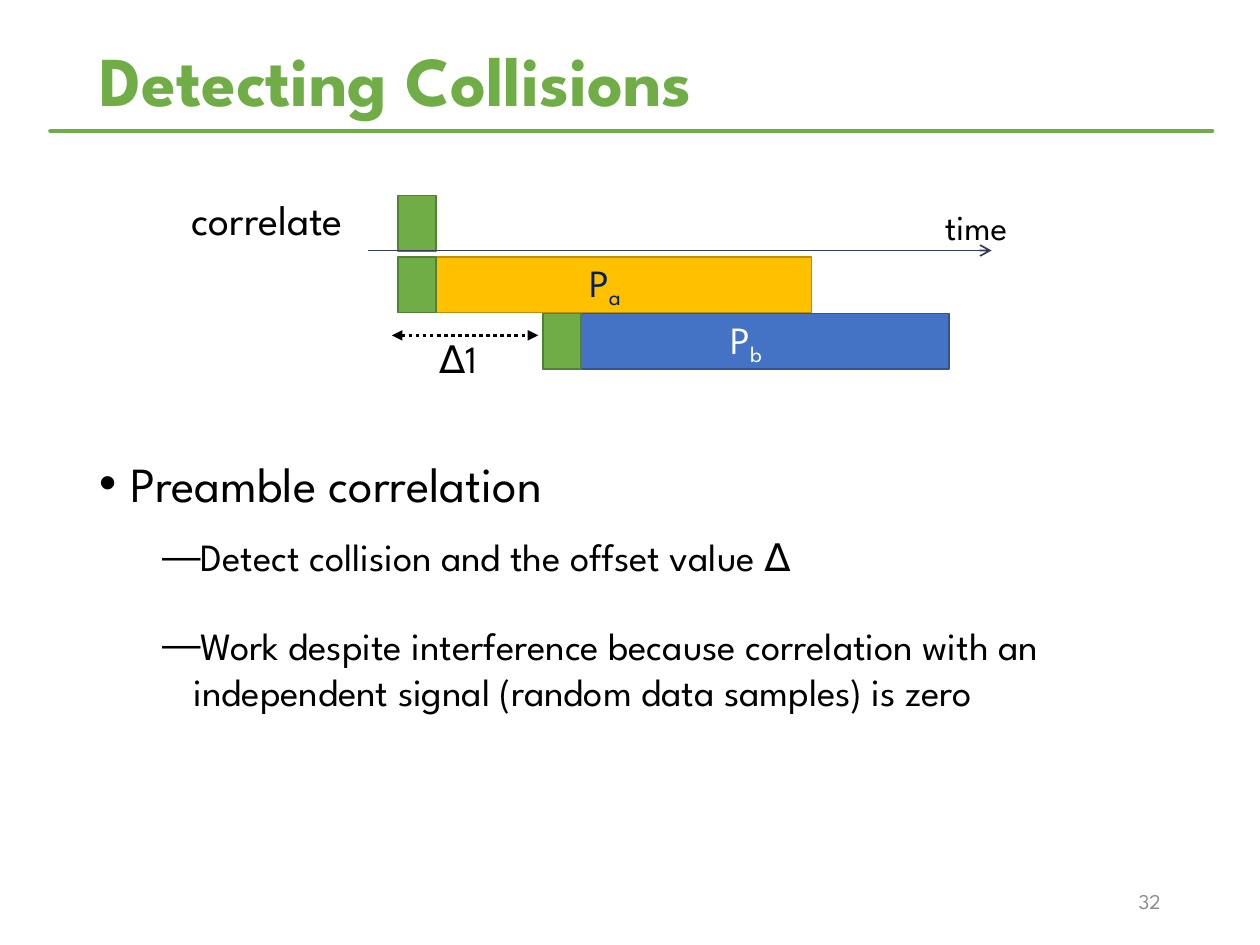
import pptx
import pptx.util
import pptx.dml.color
import pptx.enum.dml
import pptx.enum.shapes
import pptx.enum.text
import pptx.oxml
import pptx.oxml.ns

Cm, Pt = pptx.util.Cm, pptx.util.Pt
RGBColor = pptx.dml.color.RGBColor
ALIGN = pptx.enum.text.PP_ALIGN
ANCHOR = pptx.enum.text.MSO_ANCHOR
FONT = "League Spartan"
GREEN = RGBColor(0x70, 0xAD, 0x47)
MOSS = RGBColor(0x53, 0x80, 0x35)
GOLD = RGBColor(0xFF, 0xC0, 0x00)
OCHRE = RGBColor(0xBD, 0x8E, 0x00)
BLUE = RGBColor(0x44, 0x72, 0xC4)
DEEP = RGBColor(0x32, 0x54, 0x91)
NAVY = RGBColor(0x00, 0x20, 0x60)
SLATE = RGBColor(0x33, 0x3F, 0x50)
GRAY = RGBColor(0x8C, 0x8C, 0x8C)
BLACK = RGBColor(0, 0, 0)
WHITE = RGBColor(0xFF, 0xFF, 0xFF)


def write(para, text, size, color, **extra):
    """Add a run in the slide's font and return it."""
    run = para.add_run()
    run.text = text
    form = {"name": FONT, "size": Pt(size), **extra}
    for key, value in form.items():
        setattr(run.font, key, value)
    run.font.color.rgb = color
    return run


def rule(x1, x2, y, color, width, **ends):
    """Draw a level line, with arrowheads given as headEnd and tailEnd."""
    line = slide.shapes.add_connector(
        pptx.enum.shapes.MSO_CONNECTOR.STRAIGHT, Cm(x1), Cm(y), Cm(x2), Cm(y))
    line.line.color.rgb = color
    line.line.width = Pt(width)
    props = line._element.spPr
    for tag, kind in ends.items():
        end = pptx.oxml.parse_xml(
            f'<a:{tag} {pptx.oxml.ns.nsdecls("a")} type="{kind}"/>')
        line.line._get_or_add_ln().append(end)
    props.append(pptx.oxml.parse_xml(
        f'<a:effectLst {pptx.oxml.ns.nsdecls("a")}/>'))
    return line


deck = pptx.Presentation()
deck.slide_width, deck.slide_height = Cm(25.4), Cm(19.05)
slide = deck.slides.add_slide(deck.slide_layouts[5])

# Title and its rule
title = slide.shapes.title
place = {"left": 1.75, "top": 0.74, "width": 21.89, "height": 1.88}
for key, value in place.items():
    setattr(title, key, Cm(value))
frame = title.text_frame
frame.auto_size = pptx.enum.text.MSO_AUTO_SIZE.NONE
frame.vertical_anchor = ANCHOR.MIDDLE
para = frame.paragraphs[0]
para.alignment = ALIGN.LEFT
para.line_spacing = 0.9
write(para, "Detecting Collisions", 40, GREEN, bold=True)
under = rule(1.02, 24.43, 2.64, GREEN, 2.75)
under.line._get_or_add_ln().set("cap", "rnd")

# Bullets
box = slide.shapes.add_textbox(Cm(1.75), Cm(9.02), Cm(21.89), Cm(8.13))
frame = box.text_frame
frame.word_wrap = True
points = [
    (0, "Preamble correlation"),
    (1, "Detect collision and the offset value ∆"),
    (1, "Work despite interference because correlation with an "
        "independent signal (random data samples) is zero"),
]
for i, (level, text) in enumerate(points):
    para = frame.add_paragraph() if i else frame.paragraphs[0]
    para.level = level
    para.space_before = Pt(12)
    para.space_after = Pt(12 * level)
    write(para, text, (28, 22)[level], BLACK)
    props = para._p.get_or_add_pPr()
    props.set("marL", str(Cm((0.64, 1.91)[level])))
    props.set("indent", str(-Cm(0.64)))
    for mark in ('buFont typeface="Arial"', f'buChar char="{"•—"[level]}"'):
        tag, value = mark.split(" ", 1)
        props.append(pptx.oxml.parse_xml(
            f'<a:{tag} {pptx.oxml.ns.nsdecls("a")} {value}/>'))

# Offset between the packets
offset = rule(7.9, 10.85, 6.76, BLACK, 2, headEnd="triangle", tailEnd="triangle")
offset.line.dash_style = pptx.enum.dml.MSO_LINE.ROUND_DOT

# Packets, each with its preamble, and the preamble to correlate with
FIRST, SECOND = 8.03, 10.95
TOP, ROW_A, ROW_B = 3.94, 5.18, 6.32
bars = [
    (FIRST, ROW_A, 8.33, GOLD, OCHRE, "a", NAVY),
    (SECOND, ROW_B, 8.18, BLUE, DEEP, "b", WHITE),
    (FIRST, ROW_A, 0.76, GREEN, MOSS, "", WHITE),
    (SECOND, ROW_B, 0.76, GREEN, MOSS, "", WHITE),
    (FIRST, TOP, 0.76, GREEN, MOSS, "", WHITE),
]
for left, top, width, fill, edge, index, ink in bars:
    bar = slide.shapes.add_shape(
        pptx.enum.shapes.MSO_SHAPE.RECTANGLE,
        Cm(left), Cm(top), Cm(width), Cm(1.12))
    bar.shadow.inherit = False
    bar.fill.solid()
    bar.fill.fore_color.rgb = fill
    bar.line.color.rgb = edge
    bar.line.width = Pt(1)
    if index:
        frame = bar.text_frame
        for side in ("left", "top", "right", "bottom"):
            setattr(frame, f"margin_{side}", 0)
        frame.vertical_anchor = ANCHOR.MIDDLE
        para = frame.paragraphs[0]
        para.alignment = ALIGN.CENTER
        write(para, "P", 22, ink)
        sub = write(para, index, 22, ink)
        sub.font._element.set("baseline", "-20000")

rule(7.42, 19.99, 5.05, SLATE, 1, tailEnd="arrow")

# Labels and slide number
labels = [
    ("∆1", 8.61, 6.63, 2.11, 1.19, 22, BLACK, ALIGN.LEFT, ANCHOR.TOP, True),
    ("correlate", 3.61, 3.78, 4.29, 1.27, 24, BLACK, ALIGN.LEFT, ANCHOR.TOP, False),
    ("time", 18.8, 4.01, 2.03, 1.12, 20, BLACK, ALIGN.LEFT, ANCHOR.TOP, False),
    ("32", 17.93, 17.65, 5.72, 1.02, 12, GRAY, ALIGN.RIGHT, ANCHOR.MIDDLE, True),
]
for text, left, top, width, height, size, color, align, anchor, wrap in labels:
    box = slide.shapes.add_textbox(Cm(left), Cm(top), Cm(width), Cm(height))
    frame = box.text_frame
    frame.word_wrap = wrap
    frame.vertical_anchor = anchor
    para = frame.paragraphs[0]
    para.alignment = align
    write(para, text, size, color)

deck.save("out.pptx")
